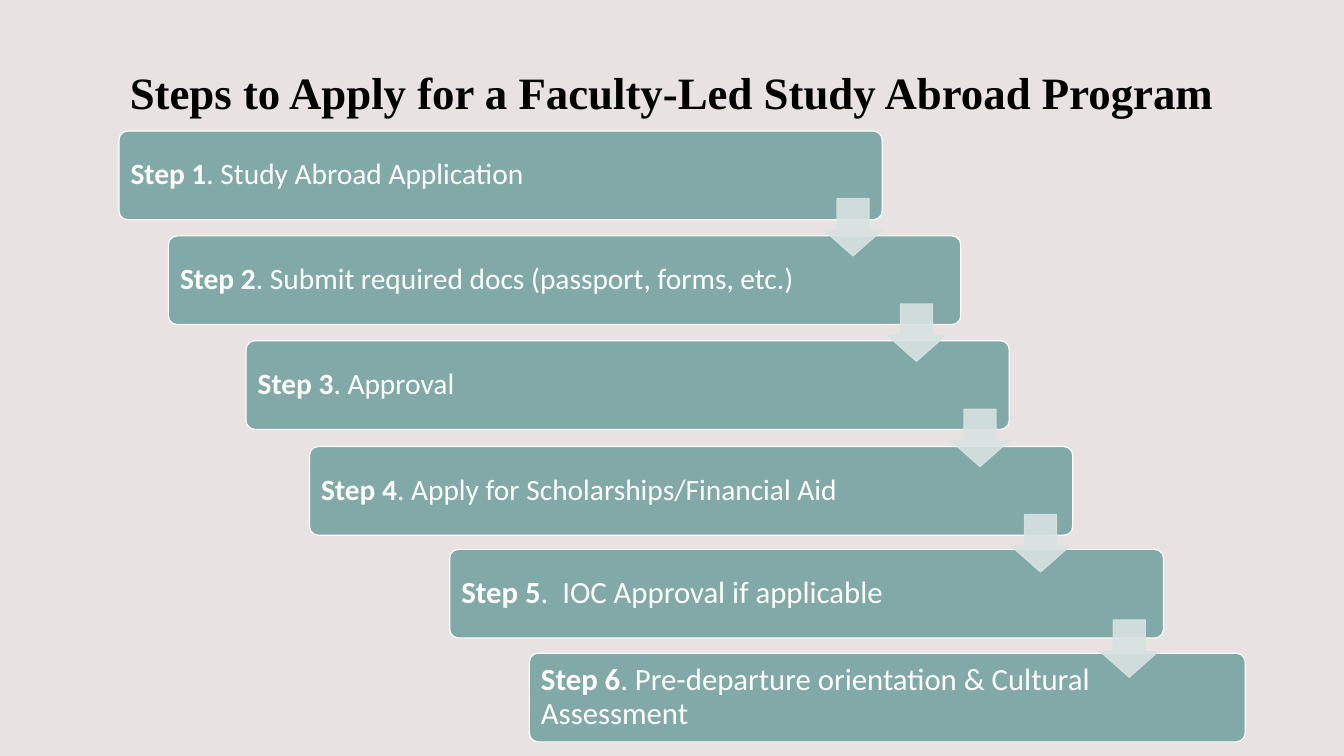
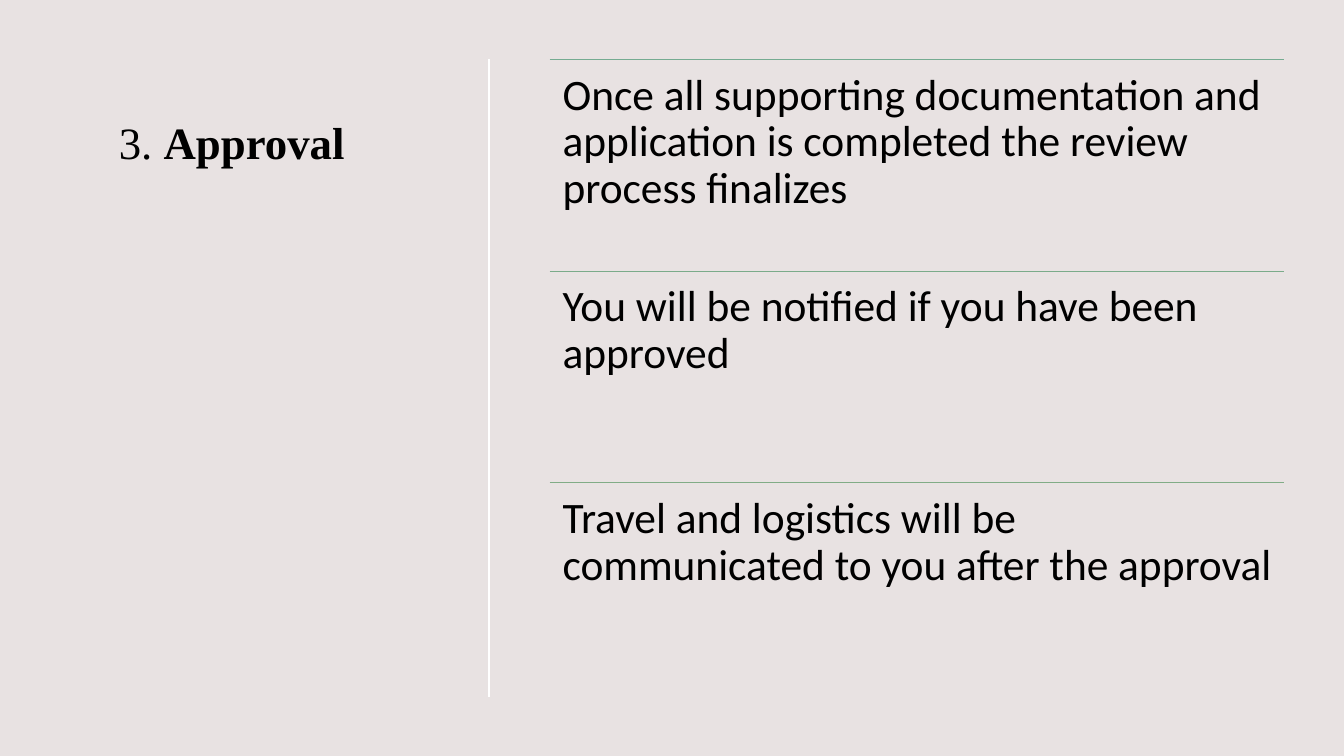
from lxml import etree
from pptx import Presentation
from pptx.dml.color import RGBColor
from pptx.enum.shapes import MSO_CONNECTOR, MSO_SHAPE
from pptx.enum.text import MSO_ANCHOR, PP_ALIGN
from pptx.oxml.ns import qn
from pptx.util import Inches, Pt

ROUNDED = MSO_SHAPE.ROUNDED_RECTANGLE
DOWN_ARROW = MSO_SHAPE.DOWN_ARROW
STRAIGHT = MSO_CONNECTOR.STRAIGHT
TOP, MIDDLE, BOTTOM = MSO_ANCHOR.TOP, MSO_ANCHOR.MIDDLE, MSO_ANCHOR.BOTTOM
LEFT, CENTER = PP_ALIGN.LEFT, PP_ALIGN.CENTER

COLORS = {"background": "E8E2E2", "step": "80A9A7", "arrow": "D8E2E1",
          "white": "FFFFFF", "black": "000000"}
TITLE_FONT, BODY_FONT = "Times New Roman", "Calibri"

# left, top, width, text size, label, description
STEPS = [
    (1.18, 1.3, 7.57, 21, "Step 1", ". Study Abroad Application"),
    (1.67, 2.34, 7.86, 21, "Step 2",
     ". Submit required docs (passport, forms, etc.)"),
    (2.44, 3.38, 7.57, 21, "Step 3", ". Approval"),
    (3.07, 4.43, 7.57, 21, "Step 4", ". Apply for Scholarships/Financial Aid"),
    (4.46, 5.45, 7.08, 22, "Step 5", ".  IOC Approval if applicable"),
    (5.25, 6.48, 7.1, 22, "Step 6",
     ". Pre-departure orientation & Cultural Assessment"),
]
ARROW_LEFTS = [8.17, 8.8, 9.43, 10.03, 10.91]
ARROW_TOP, ARROW_BOTTOM_ROW = 1.97, 6.15
ARROW_PITCH = (ARROW_BOTTOM_ROW - ARROW_TOP) / (len(ARROW_LEFTS) - 1)

# divider colour, text
APPROVAL_NOTES = [
    ("75AB91", "Once all supporting documentation and application is completed "
               "the review process finalizes"),
    ("7BAB8A", "You will be notified if you have been approved"),
    ("81AC86", "Travel and logistics will be communicated to you after "
               "the approval"),
]
NOTES_LEFT, NOTES_TOP, NOTES_WIDTH, NOTE_HEIGHT = 5.45, 0.59, 7.29, 2.1


def rgb(color):
    return RGBColor.from_string(COLORS.get(color, color))


class Deck:
    """Holds the shared style and the current slide."""

    def __init__(self):
        self.prs = Presentation()
        self.prs.slide_width = Inches(13.33)
        self.prs.slide_height = Inches(7.5)
        self.slide = None

    def add_slide(self):
        self.slide = self.prs.slides.add_slide(self.prs.slide_layouts[6])
        background = self.slide.background.fill
        background.solid()
        background.fore_color.rgb = rgb("background")

    def set_text(self, shape, runs, size, font, color, insets, anchor,
                 align=LEFT, spacing=0.9):
        """Fill in one paragraph; runs are (text, bold) pairs."""
        frame = shape.text_frame
        frame.word_wrap = True
        frame.vertical_anchor = anchor
        (frame.margin_left, frame.margin_top,
         frame.margin_right, frame.margin_bottom) = map(Inches, insets)
        paragraph = frame.paragraphs[0]
        paragraph.alignment = align
        paragraph.line_spacing = spacing
        paragraph.font.name = font
        paragraph.font.size = Pt(size)
        paragraph.font.color.rgb = rgb(color)
        for text, bold in runs:
            run = paragraph.add_run()
            run.text = text
            run.font.bold = bold

    def text_box(self, left, top, width, height):
        return self.slide.shapes.add_textbox(
            Inches(left), Inches(top), Inches(width), Inches(height))

    def title(self, box, runs, anchor, align):
        self.set_text(self.text_box(*box), runs, 32, TITLE_FONT, "black",
                      (0.1, 0.05, 0.1, 0.05), anchor, align, spacing=1.1)

    def shape(self, preset, box, adjustments, fill, line):
        shape = self.slide.shapes.add_shape(preset, *map(Inches, box))
        shape.shadow.inherit = False
        for index, value in enumerate(adjustments):
            shape.adjustments[index] = value
        shape.fill.solid()
        shape.fill.fore_color.rgb = rgb(fill)
        shape.line.color.rgb = rgb(line)
        shape.line.width = Pt(0.85)
        return shape

    def step(self, left, top, width, size, label, description):
        bar = self.shape(ROUNDED, (left, top, width, 0.88), [0.1],
                         "step", "white")
        self.set_text(bar, [(label, True), (description, False)], size,
                      BODY_FONT, "white", (0.09, 0.09, 1.2, 0.09), MIDDLE)

    def arrow(self, left, top):
        arrow = self.shape(DOWN_ARROW, (left, top, 0.58, 0.57), [0.55, 0.45],
                           "arrow", "arrow")
        # 90 % opacity for fill and outline
        for color in arrow._element.spPr.iter(qn("a:srgbClr")):
            etree.SubElement(color, qn("a:alpha"), val="90000")

    def line(self, x1, y1, x2, y2, color, width):
        line = self.slide.shapes.add_connector(
            STRAIGHT, *map(Inches, (x1, y1, x2, y2)))
        line.line.color.rgb = rgb(color)
        line.line.width = Pt(width)
        etree.SubElement(line._element.spPr, qn("a:effectLst"))

    def note(self, top, color, text):
        self.line(NOTES_LEFT, top, NOTES_LEFT + NOTES_WIDTH, top, color, 0.75)
        box = self.text_box(NOTES_LEFT, top, NOTES_WIDTH, NOTE_HEIGHT)
        self.set_text(box, [(text, False)], 31, BODY_FONT, "black",
                      (0.13,) * 4, TOP)


def main():
    deck = Deck()

    # Slide 1: staircase of steps
    deck.add_slide()
    deck.title((1.08, 0, 11.17, 1.22),
               [("Steps to Apply for a Faculty-Led Study Abroad Program", True)],
               BOTTOM, CENTER)
    for step in STEPS:
        deck.step(*step)
    for index, left in enumerate(ARROW_LEFTS):
        deck.arrow(left, ARROW_TOP + index * ARROW_PITCH)

    # Slide 2: approval notes
    deck.add_slide()
    deck.title((1.08, 1.04, 3.06, 5.13), [("3. ", False), ("Approval", True)],
               TOP, LEFT)
    deck.line(4.85, 0.59, 4.85, 6.91, "white", 1)
    for index, (color, text) in enumerate(APPROVAL_NOTES):
        deck.note(NOTES_TOP + index * NOTE_HEIGHT, color, text)

    deck.prs.save("out.pptx")


if __name__ == "__main__":
    main()
